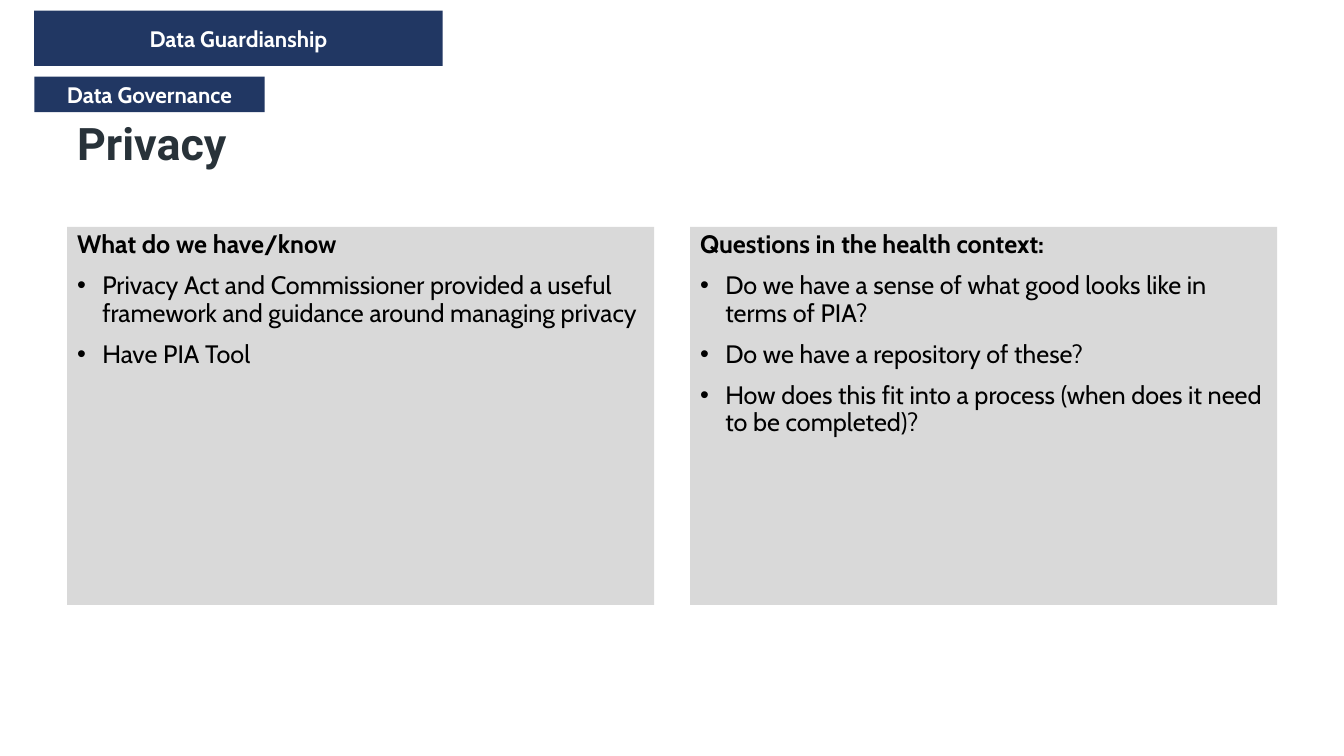
"""Builds the Privacy slide with two tags and two text panels."""
from lxml.etree import SubElement
from pptx import Presentation
from pptx.dml.color import RGBColor
from pptx.enum.shapes import MSO_SHAPE
from pptx.enum.text import MSO_ANCHOR, PP_ALIGN
from pptx.oxml.ns import qn
from pptx.util import Pt

NAVY = RGBColor(0x21, 0x37, 0x63)
GREY = RGBColor(0xD9, 0xD9, 0xD9)
SLATE = RGBColor(0x28, 0x32, 0x39)
BLACK = RGBColor(0, 0, 0)
WHITE = RGBColor(0xFF, 0xFF, 0xFF)


def add_box(left, top, width, height, fill):
    sp = s.shapes.add_shape(MSO_SHAPE.RECTANGLE, Pt(left), Pt(top), Pt(width), Pt(height))
    sp.shadow.inherit = False
    sp.fill.solid()
    sp.fill.fore_color.rgb = fill
    sp.line.fill.background()
    return sp.text_frame


def add_run(p, text, size, font, color, bold):
    r = p.add_run()
    r.text = text
    r.font.size = Pt(size)
    r.font.name = font
    r.font.color.rgb = color
    r.font.bold = bold


prs = Presentation()
prs.slide_width, prs.slide_height = Pt(960), Pt(540)
s = prs.slides.add_slide(prs.slide_layouts[6])

tf = s.shapes.add_textbox(Pt(48), Pt(59.5), Pt(864), Pt(90)).text_frame
tf.word_wrap = True
tf.vertical_anchor = MSO_ANCHOR.MIDDLE
p = tf.paragraphs[0]
p.line_spacing = 0.9
add_run(p, "Privacy", 32, "Roboto", SLATE, True)

tags = [
    ("Data Governance", 54.7, 164.5, 25.5),
    ("Data Guardianship", 7.5, 291.75, 39.5),
]
for text, top, width, height in tags:
    tf = add_box(24.5, top, width, height, NAVY)
    tf.word_wrap = False
    tf.vertical_anchor = MSO_ANCHOR.MIDDLE
    p = tf.paragraphs[0]
    p.alignment = PP_ALIGN.CENTER
    add_run(p, text, 16, "Cabin", WHITE, True)

panels = [
    (48, "What do we have/know", [
        "Privacy Act and Commissioner provided a useful framework and guidance around managing privacy",
        "Have PIA Tool",
    ]),
    (493, "Questions in the health context:", [
        "Do we have a sense of what good looks like in terms of PIA?",
        "Do we have a repository of these?",
        "How does this fit into a process (when does it need to be completed)?",
    ]),
]
for left, heading, points in panels:
    tf = add_box(left, 162, 419.25, 270, GREY)
    tf.word_wrap = True
    tf.vertical_anchor = MSO_ANCHOR.TOP
    p = tf.paragraphs[0]
    p.alignment = PP_ALIGN.LEFT
    p.line_spacing = 0.9
    add_run(p, heading, 18, "Cabin", BLACK, True)
    for point in points:
        p = tf.add_paragraph()
        pPr = p._p.get_or_add_pPr()
        pPr.set("marL", str(Pt(18)))
        pPr.set("indent", str(-Pt(18)))
        SubElement(pPr, qn("a:buFont"), typeface="Arial")
        SubElement(pPr, qn("a:buChar"), char="•")
        p.alignment = PP_ALIGN.LEFT
        p.line_spacing = 0.9
        p.space_before = Pt(10)
        add_run(p, point, 18, "Cabin", BLACK, False)

prs.save("out.pptx")
